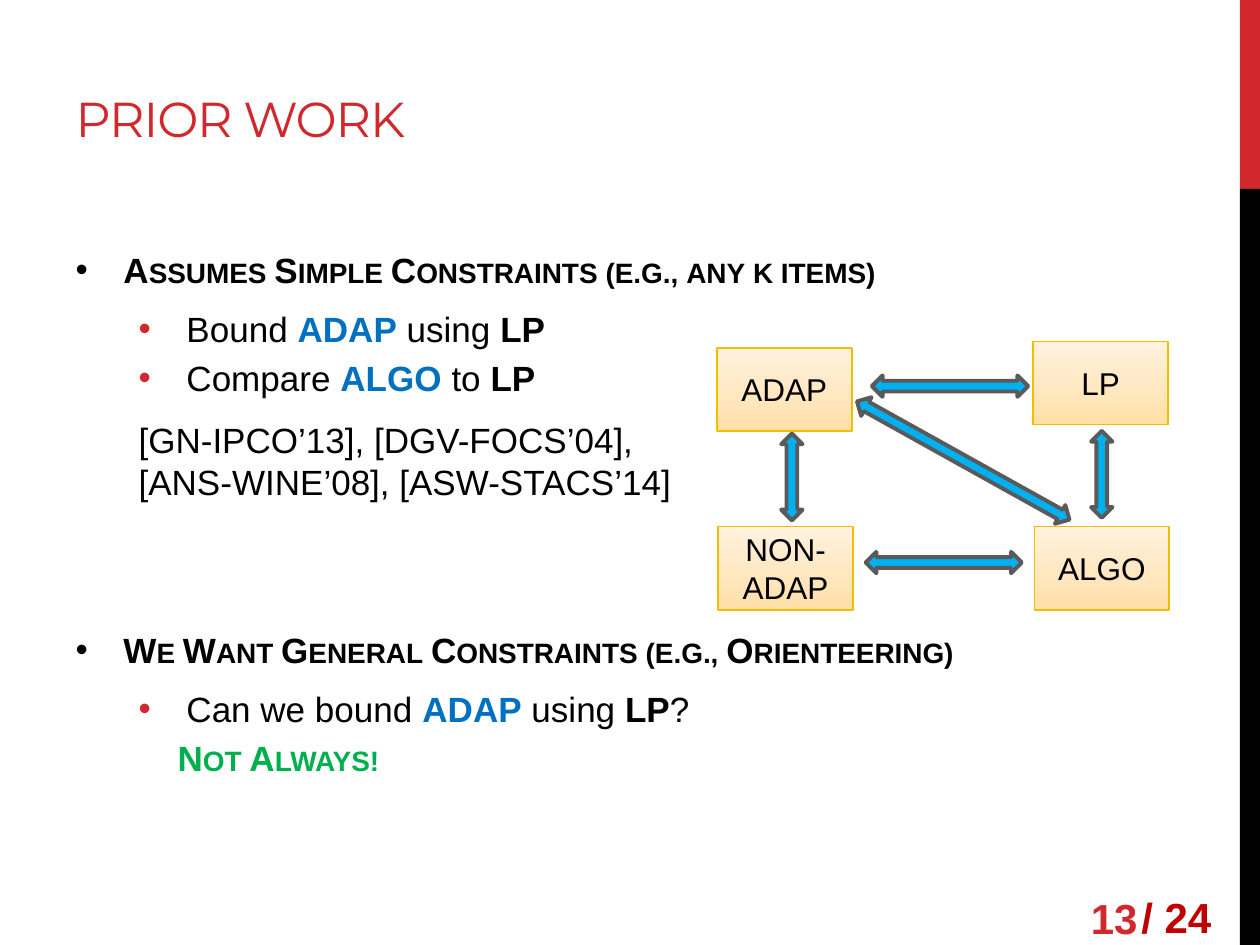
import lxml.etree
import copy
import pptx
import pptx.dml.color
import pptx.enum.shapes
import pptx.enum.text
import pptx.oxml.ns
import pptx.util

Inches, Pt = pptx.util.Inches, pptx.util.Pt
SHAPES = pptx.enum.shapes.MSO_SHAPE
ANCHOR = pptx.enum.text.MSO_ANCHOR
ALIGN = pptx.enum.text.PP_ALIGN
qn = pptx.oxml.ns.qn

RED, BLACK, BLUE, GREEN = "D1282E", "000000", "0070C0", "00B050"
PEACH = ((0, "FFDFA5"), (0.35, "FFE6BD"), (1, "FFF2DF"))
BOX_SIZE = (1.07, 0.66)

BOXES = (("ADAP", 5.69, 2.76), ("NON-ADAP", 5.7, 4.18),
         ("ALGO", 8.21, 4.18), ("LP", 8.2, 2.71))
ARROWS = ((6.68, 3.57, 1.93, 29.1), (5.94, 3.7, 0.69, 270),
          (6.87, 4.38, 1.24, 0), (6.92, 2.98, 1.24, 0),
          (8.4, 3.68, 0.69, 270))

# text, colour, bold
ADAP, ALGO, LP = ("ADAP", BLUE, True), ("ALGO ", BLUE, True), ("LP", BLACK, True)
USING = (" using ", BLACK, False)


def rgb(hex_colour):
    """Return the colour object for a hex string."""
    return pptx.dml.color.RGBColor.from_string(hex_colour)


def place(shape, left, top, width, height):
    """Set the position and size of a shape in inches."""
    shape.left, shape.top = Inches(left), Inches(top)
    shape.width, shape.height = Inches(width), Inches(height)


def add_run(paragraph, text, size, colour, bold=False, font="Arial", **attributes):
    """Append one formatted run, with extra run attributes."""
    run = paragraph.add_run()
    run.text = text
    run.font.name, run.font.size, run.font.bold = font, Pt(size), bold
    run.font.color.rgb = rgb(colour)
    for name, value in attributes.items():
        run.font._element.set(name, value)


def add_shape(slide, kind, left, top, width, height):
    """Add a preset shape without a shadow."""
    shape = slide.shapes.add_shape(
        kind, Inches(left), Inches(top), Inches(width), Inches(height))
    shape.shadow.inherit = False
    return shape


def add_bar(slide, top, height, colour):
    """Add one part of the stripe at the right edge."""
    bar = add_shape(slide, SHAPES.RECTANGLE, 9.84, top, 0.16, height)
    bar.fill.solid()
    bar.fill.fore_color.rgb = rgb(colour)
    bar.line.fill.background()


def add_label(slide, text, bounds, colour, wrap):
    """Add one part of the page count."""
    label = slide.shapes.add_textbox(*map(Inches, bounds))
    frame = label.text_frame
    frame.word_wrap = wrap
    add_run(frame.paragraphs[0], text, 24, colour, True)
    return frame


def add_box(slide, text, left, top):
    """Add a diagram box with a peach gradient."""
    box = add_shape(slide, SHAPES.RECTANGLE, left, top, *BOX_SIZE)
    box.fill.gradient()
    box.fill.gradient_angle = 90
    stops = box._element.spPr.find(".//" + qn("a:gsLst"))
    stops.append(copy.deepcopy(stops[0]))
    for stop, (position, colour) in zip(box.fill.gradient_stops, PEACH):
        stop.position = position
        stop.color.rgb = rgb(colour)
    box.line.color.rgb = rgb("F1BE00")
    box.line.width = Pt(1)
    frame = box.text_frame
    frame.word_wrap = True
    frame.vertical_anchor = ANCHOR.MIDDLE
    frame.paragraphs[0].alignment = ALIGN.CENTER
    add_run(frame.paragraphs[0], text, 18, BLACK)


def add_arrow(slide, left, top, length, rotation):
    """Add a two-headed block arrow."""
    arrow = add_shape(slide, SHAPES.LEFT_RIGHT_ARROW, left, top, length, 0.17)
    arrow.rotation = rotation
    arrow.fill.solid()
    arrow.fill.fore_color.rgb = rgb("00B0F0")
    arrow.line.color.rgb = rgb("5A5A5A")
    arrow.line.width = Pt(2.25)


def set_indent(paragraph, margin, hanging, bullet_colour):
    """Set the indent, and a bullet if it has a colour."""
    properties = paragraph._p.get_or_add_pPr()
    properties.set("marL", str(Inches(margin)))
    properties.set("indent", str(-Inches(hanging)))
    if bullet_colour is None:
        lxml.etree.SubElement(properties, qn("a:buNone"))
        return
    colour = lxml.etree.SubElement(properties, qn("a:buClr"))
    lxml.etree.SubElement(colour, qn("a:srgbClr"), val=bullet_colour)
    lxml.etree.SubElement(properties, qn("a:buFont"), typeface="Arial")
    lxml.etree.SubElement(properties, qn("a:buChar"), char="•")


def add_item(frame, runs, level=1, margin=0.88, hanging=0.38,
             bullet=RED, before=4, after=0, **attributes):
    """Add one paragraph to the body list."""
    first = not frame.paragraphs[0].runs
    paragraph = frame.paragraphs[0] if first else frame.add_paragraph()
    paragraph.level = level
    set_indent(paragraph, margin, hanging, bullet)
    paragraph.alignment = ALIGN.LEFT
    paragraph.line_spacing = Pt(24)
    paragraph.space_before, paragraph.space_after = Pt(before), Pt(after)
    for index, (text, colour, bold) in enumerate(runs):
        for part, line in enumerate(text.split("\n")):
            if part:
                paragraph.add_line_break()
            add_run(paragraph, line, 20, colour, bold, **attributes)


def add_heading(frame, text, before):
    """Add a small-caps heading to the body list."""
    add_item(frame, [(text, BLACK, True)], level=0, margin=0.38,
             bullet=BLACK, before=before, after=6, cap="small")


def fill_title(title):
    """Place and write the slide title."""
    place(title, 0.5, 0.08, 8.14, 1.14)
    frame = title.text_frame
    frame.auto_size = pptx.enum.text.MSO_AUTO_SIZE.NONE
    frame.vertical_anchor = ANCHOR.BOTTOM
    frame.paragraphs[0].alignment = ALIGN.LEFT
    add_run(frame.paragraphs[0], "PRIOR WORK", 28, RED, font="Montserrat", spc="-60")


def fill_body(body):
    """Place and write the body list."""
    place(body, 0.5, 1.92, 7.56, 5.17)
    frame = body.text_frame
    frame.auto_size = pptx.enum.text.MSO_AUTO_SIZE.NONE
    add_heading(frame, "Assumes Simple Constraints (e.g., any k items)", 0)
    add_item(frame, [("Bound ", BLACK, False), ADAP, USING, LP])
    add_item(frame, [("Compare ", BLACK, False), ALGO, ("to ", BLACK, False), LP])
    citations = "[GN-IPCO’13], [DGV-FOCS’04],\n[ANS-WINE’08], [ASW-STACS’14]"
    add_item(frame, [(citations, BLACK, False)],
             margin=0.5, hanging=0, bullet=None, before=11)
    add_heading(frame, "We Want General Constraints (e.g., Orienteering)", 72)
    add_item(frame, [("Can we bound ", BLACK, False), ADAP, USING, LP,
                     ("?", BLACK, False)])
    add_item(frame, [("Not Always!", GREEN, True)],
             margin=0.81, hanging=0, bullet=None, cap="small")


def main():
    """Build and save the slide."""
    deck = pptx.Presentation()
    deck.slide_width, deck.slide_height = Inches(10), Inches(7.5)
    slide = deck.slides.add_slide(deck.slide_layouts[1])
    add_bar(slide, 0, 1.5, RED)
    add_bar(slide, 1.5, 6, BLACK)
    add_label(slide, "/ 24", (8.96, 7.03, 0.76, 0.5), "C00000", False)
    fill_title(slide.shapes.title)
    fill_body(slide.placeholders[1])
    page = add_label(slide, "13", (8.56, 7.08, 1.44, 0.4), RED, True)
    page.vertical_anchor = ANCHOR.MIDDLE
    for box in BOXES:
        add_box(slide, *box)
    for arrow in ARROWS:
        add_arrow(slide, *arrow)
    deck.save("out.pptx")


if __name__ == "__main__":
    main()
